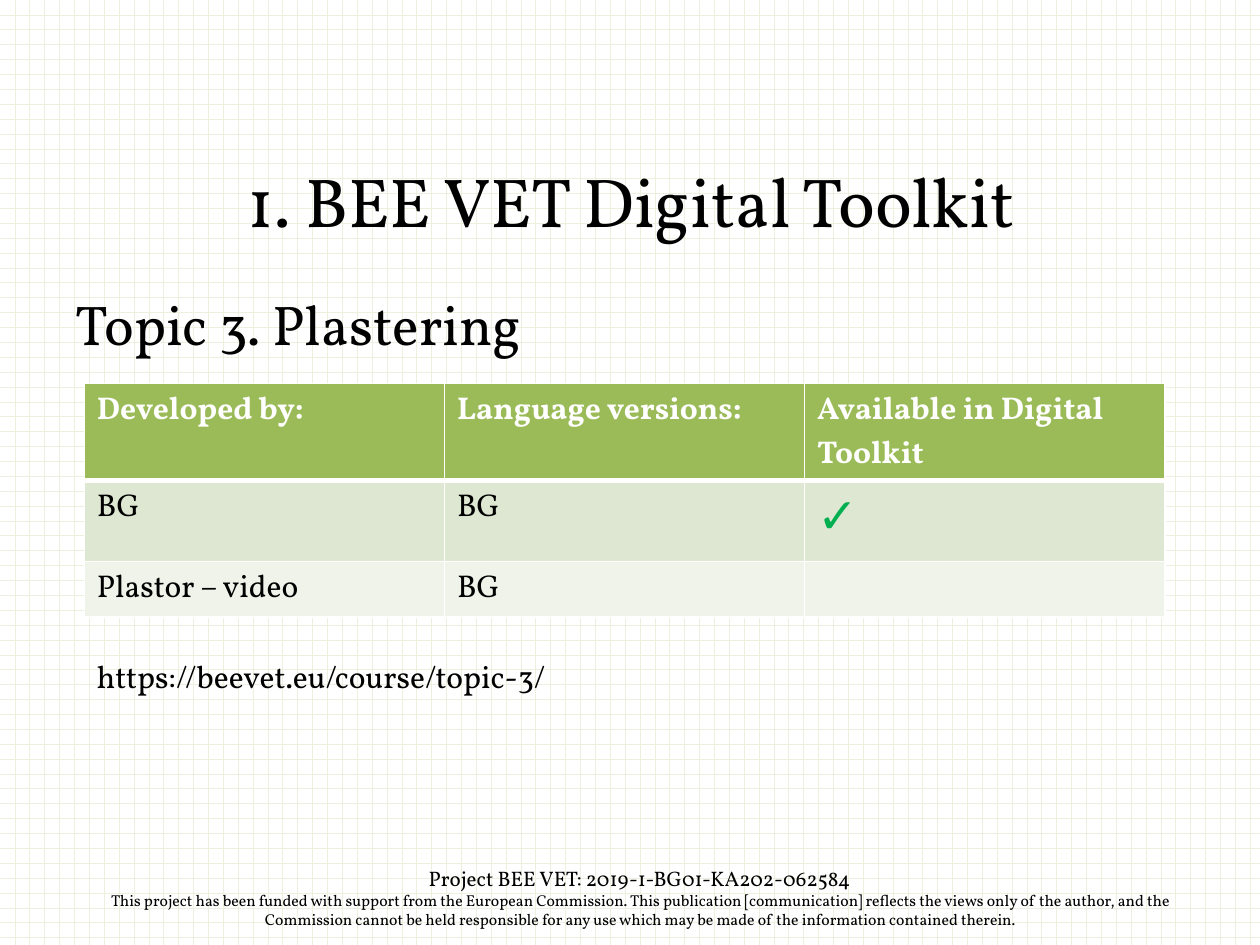
import pptx
import pptx.dml.color
import pptx.enum.dml
import pptx.enum.text
import pptx.oxml
import pptx.oxml.ns
import pptx.util

Cm = pptx.util.Cm
Pt = pptx.util.Pt
ALIGN = pptx.enum.text.PP_ALIGN
ANCHOR = pptx.enum.text.MSO_ANCHOR
GROW = pptx.enum.text.MSO_AUTO_SIZE.SHAPE_TO_FIT_TEXT

TABLE_ROWS = [
    ["Developed by:", "Language versions:", "Available in Digital Toolkit"],
    ["BG", "BG", "✓"],
    ["Plastor – video", "BG", ""],
]
ROW_HEIGHTS = [1.96, 1.63, 1.12]
ROW_FILLS = ["9BBB59", "DEE7D1", "EFF3EA"]
FOOTER = [
    ("Project BEE VET: 2019-1-BG01-KA202-062584", 12),
    ("This project has been funded with support from the European Commission. "
     "This publication [communication] reflects the views only of the author, and the "
     "Commission cannot be held responsible for any use which may be made of the "
     "information contained therein.", 9),
]


def color(value):
    return pptx.dml.color.RGBColor.from_string(value)


def set_values(target, values):
    for name, value in values.items():
        setattr(target, name, value)


def write(para, text, size, fill="000000", bold=False):
    span = para.add_run()
    span.text = text
    set_values(span.font, {"name": "Vollkorn", "size": Pt(size), "bold": bold})
    span.font.color.rgb = color(fill)


def add_text(page, box, lines, align=ALIGN.LEFT, **frame_values):
    frame = page.shapes.add_textbox(*map(Cm, box)).text_frame
    set_values(frame, {"word_wrap": True, **frame_values})
    for index, (text, size) in enumerate(lines):
        para = frame.add_paragraph() if index else frame.paragraphs[0]
        para.alignment = align
        write(para, text, size)


def add_borders(cell, widths):
    properties = cell._tc.get_or_add_tcPr()
    for index, (side, width) in enumerate(zip("LRTB", widths)):
        properties.insert(index, pptx.oxml.parse_xml(
            f'<a:ln{side} {pptx.oxml.ns.nsdecls("a")} w="{Pt(width)}">'
            '<a:solidFill><a:srgbClr val="FFFFFF"/></a:solidFill>'
            f'</a:ln{side}>'))


def add_versions_table(page, left, top, width):
    table = page.shapes.add_table(
        len(TABLE_ROWS), len(TABLE_ROWS[0]),
        Cm(left), Cm(top), Cm(width), Cm(sum(ROW_HEIGHTS))).table
    for column in table.columns:
        column.width = Cm(width / len(table.columns))
    for row_index, texts in enumerate(TABLE_ROWS):
        header = row_index == 0
        table.rows[row_index].height = Cm(ROW_HEIGHTS[row_index])
        for column_index, text in enumerate(texts):
            cell = table.cell(row_index, column_index)
            cell.fill.solid()
            cell.fill.fore_color.rgb = color(ROW_FILLS[row_index])
            add_borders(cell, (1, 1, 3 if row_index == 1 else 1, 3 if header else 1))
            para = cell.text_frame.paragraphs[0]
            if text == "✓":
                write(para, text, 28, "00B050")
            elif text:
                write(para, text, 18, "FFFFFF" if header else "000000", header)
            else:
                set_values(para.font, {"name": "Vollkorn", "size": Pt(18)})


def add_background(page):
    fill = page.background.fill
    fill.patterned()
    fill.pattern = pptx.enum.dml.MSO_PATTERN.HORIZONTAL_BRICK
    fill.fore_color.rgb = color("EBF1DE")
    fill.back_color.rgb = color("FFFFFF")


def main():
    deck = pptx.Presentation()
    set_values(deck, {"slide_width": Cm(25.4), "slide_height": Cm(19.05)})
    page = deck.slides.add_slide(deck.slide_layouts[6])
    add_background(page)
    add_text(page, (1.3, 17.32, 23.2, 1.55), FOOTER, ALIGN.CENTER, auto_size=GROW)
    add_text(page, (1.3, 3.12, 22.86, 1.8), [("1. BEE VET Digital Toolkit", 39.6)],
             ALIGN.CENTER, vertical_anchor=ANCHOR.MIDDLE)
    add_text(page, (1.27, 5.72, 22.86, 11.3), [("Topic 3. Plastering", 32)])
    add_versions_table(page, 1.7, 7.73, 21.78)
    add_text(page, (1.7, 13.13, 10.57, 1.02), [("https://beevet.eu/course/topic-3/", 18)],
             word_wrap=False, auto_size=GROW)
    deck.save("out.pptx")


if __name__ == "__main__":
    main()
